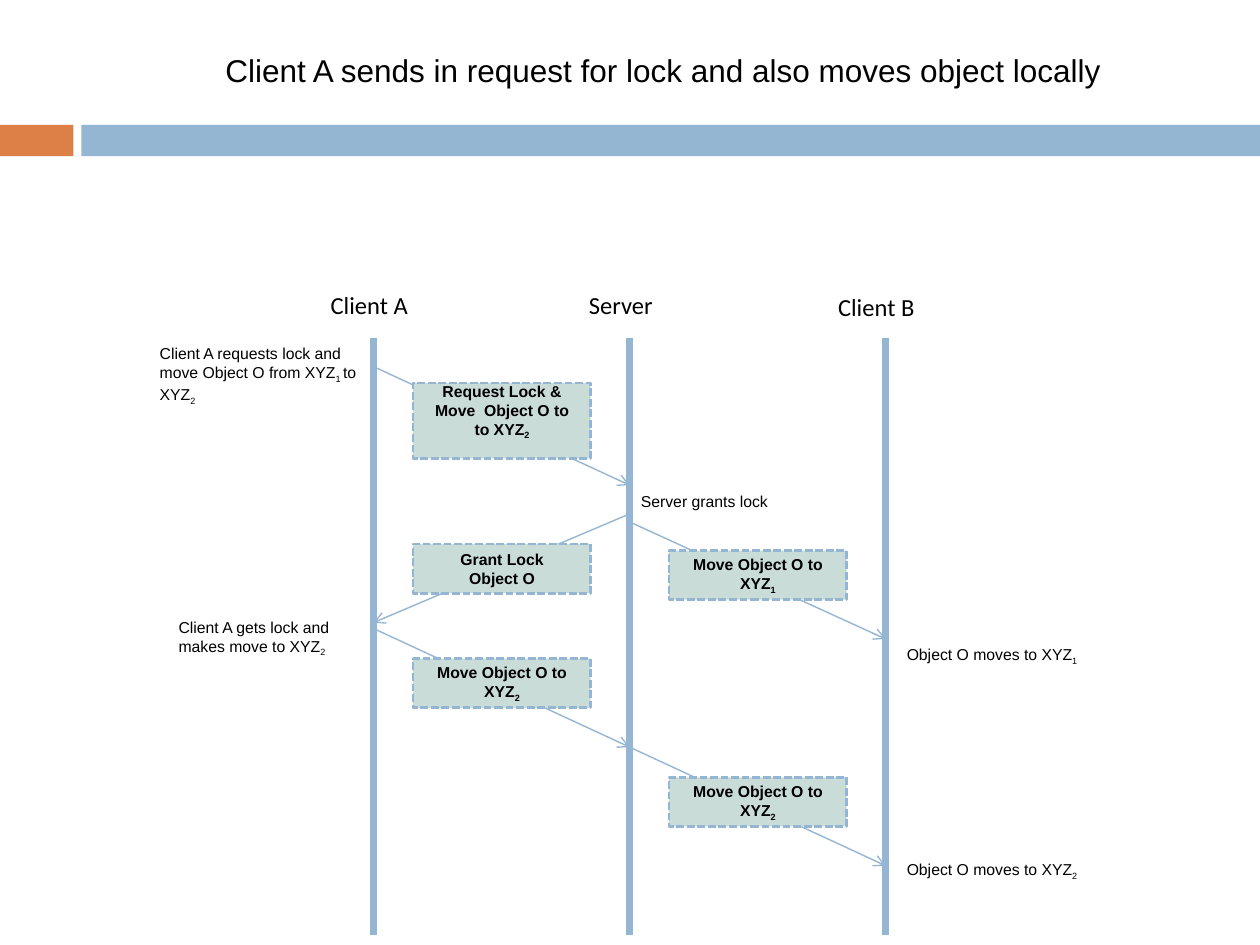
from dataclasses import dataclass

from lxml import etree
from pptx import Presentation
from pptx import util as u
from pptx.dml.color import RGBColor
from pptx.enum import dml, shapes, text
from pptx.oxml.ns import qn

COLOURS = {"accent": "DD8047", "blue": "94B6D2", "pale": "CADCD8", "ink": "000000"}
LIFELINES = [7.53 + 5.16 * i for i in range(3)]
LIFELINE_TOP, LIFELINE_END = 6.81, 18.85
CLIENT_A, SERVER, CLIENT_B = range(3)
CENTER, LEFT = text.PP_ALIGN.CENTER, text.PP_ALIGN.LEFT


@dataclass
class Label:
    """Text in which every second part between bars is a subscript."""
    left: float
    top: float
    width: float
    height: float
    wording: str
    size: float = 9
    font: str = "Arial"
    align: text.PP_ALIGN = LEFT


@dataclass
class Message:
    sender: int
    receiver: int
    start: float
    end: float
    box_top: float
    wording: str
    box_height: float = 0.99
    bottom_inset: float = 0.13


HEADINGS = [
    Label(5.26, 5.72, 4.37, 0.86, "Client A", 14, "Calibri", CENTER),
    Label(9.63, 5.72, 5.77, 0.86, "Server", 14, "Calibri", CENTER),
    Label(14.78, 5.77, 5.77, 0.86, "Client B", 14, "Calibri", CENTER),
]
MESSAGES = [
    Message(CLIENT_A, SERVER, 7.39, 9.78, 7.72,
            "Request Lock & Move  Object O to to XYZ|2", 1.52, 0.51),
    Message(SERVER, CLIENT_A, 10.36, 12.55, 10.97, "Grant Lock\nObject O"),
    Message(SERVER, CLIENT_B, 10.52, 12.88, 11.1, "Move Object O to XYZ|1"),
    Message(CLIENT_A, SERVER, 12.67, 15.06, 13.28, "Move Object O to XYZ|2"),
    Message(SERVER, CLIENT_B, 15.06, 17.45, 15.67, "Move Object O to XYZ|2"),
]
NOTES = [
    Label(2.97, 6.81, 4.57, 1.42,
          "Client A requests lock and move Object O from XYZ|1 |to XYZ|2"),
    Label(3.35, 12.32, 4.57, 1.02, "Client A gets lock and\nmakes move to XYZ|2"),
    Label(12.67, 9.78, 4.57, 0.64, "Server grants lock"),
    Label(18.03, 12.88, 4.57, 0.64, "Object O moves to XYZ|1"),
    Label(18.03, 17.2, 4.57, 0.64, "Object O moves to XYZ|2"),
]


def colour(name: str) -> RGBColor:
    return RGBColor.from_string(COLOURS[name])


def write(frame, wording: str, size: float, font: str = "Arial",
          align: text.PP_ALIGN = LEFT, bold: bool = False) -> None:
    for row, line in enumerate(wording.split("\n")):
        paragraph = frame.paragraphs[0] if row == 0 else frame.add_paragraph()
        paragraph.alignment = align
        for part, words in enumerate(line.split("|")):
            run = paragraph.add_run()
            run.text = words
            run.font.size = u.Pt(size)
            run.font.name = font
            run.font.bold = bold
            run.font.color.rgb = colour("ink")
            if part % 2:
                run.font._element.set("baseline", "-25000")


def add_rectangle(slide, left: float, top: float, width: float, height: float, fill: str):
    rectangle = slide.shapes.add_shape(
        shapes.MSO_SHAPE.RECTANGLE, u.Cm(left), u.Cm(top), u.Cm(width), u.Cm(height))
    rectangle.shadow.inherit = False
    rectangle.fill.solid()
    rectangle.fill.fore_color.rgb = colour(fill)
    rectangle.line.fill.background()
    return rectangle


def add_line(slide, x1: float, y1: float, x2: float, y2: float,
             weight: float, arrow: bool = False) -> None:
    connector = slide.shapes.add_connector(
        shapes.MSO_CONNECTOR.STRAIGHT, u.Cm(x1), u.Cm(y1), u.Cm(x2), u.Cm(y2))
    connector.line.color.rgb = colour("blue")
    connector.line.width = u.Pt(weight)
    if arrow:
        etree.SubElement(connector.line._get_or_add_ln(), qn("a:tailEnd"), type="arrow")
    etree.SubElement(connector._element.spPr, qn("a:effectLst"))


def add_label(slide, label: Label) -> None:
    frame = slide.shapes.add_textbox(u.Cm(label.left), u.Cm(label.top),
                                     u.Cm(label.width), u.Cm(label.height)).text_frame
    frame.word_wrap = True
    write(frame, label.wording, label.size, label.font, label.align)


def add_message_box(slide, message: Message) -> None:
    left = LIFELINES[min(message.sender, message.receiver)] + 0.8
    box = add_rectangle(slide, left, message.box_top, 3.58, message.box_height, "pale")
    box.line.color.rgb = colour("blue")
    box.line.width = u.Pt(1.5)
    box.line.dash_style = dml.MSO_LINE.SQUARE_DOT
    frame = box.text_frame
    frame.word_wrap = True
    frame.vertical_anchor = text.MSO_ANCHOR.MIDDLE
    frame.margin_bottom = u.Cm(message.bottom_inset)
    write(frame, message.wording, 9, align=CENTER, bold=True)


def main() -> None:
    deck = Presentation()
    deck.slide_width, deck.slide_height = u.Cm(25.4), u.Cm(19.05)
    slide = deck.slides.add_slide(deck.slide_layouts[5])

    # Title and band
    title = slide.shapes.title
    title.left, title.top = u.Cm(4.29), u.Cm(0.91)
    title.width, title.height = u.Cm(18.34), u.Cm(1.02)
    title.text_frame.word_wrap = False
    title.text_frame.vertical_anchor = text.MSO_ANCHOR.TOP
    write(title.text_frame,
          "Client A sends in request for lock and also moves object locally", 18)
    add_rectangle(slide, 0, 2.52, 1.48, 0.63, "accent")
    add_rectangle(slide, 1.64, 2.52, 23.76, 0.63, "blue")

    # Arrows lie under the lifelines and the message boxes
    for message in MESSAGES:
        add_line(slide, LIFELINES[message.sender], message.start,
                 LIFELINES[message.receiver], message.end, 0.79, arrow=True)
    for x in LIFELINES:
        add_line(slide, x, LIFELINE_TOP, x, LIFELINE_END, 4)
    for message in MESSAGES:
        add_message_box(slide, message)

    # Headings and notes
    for label in HEADINGS + NOTES:
        add_label(slide, label)

    deck.save("out.pptx")


if __name__ == "__main__":
    main()
